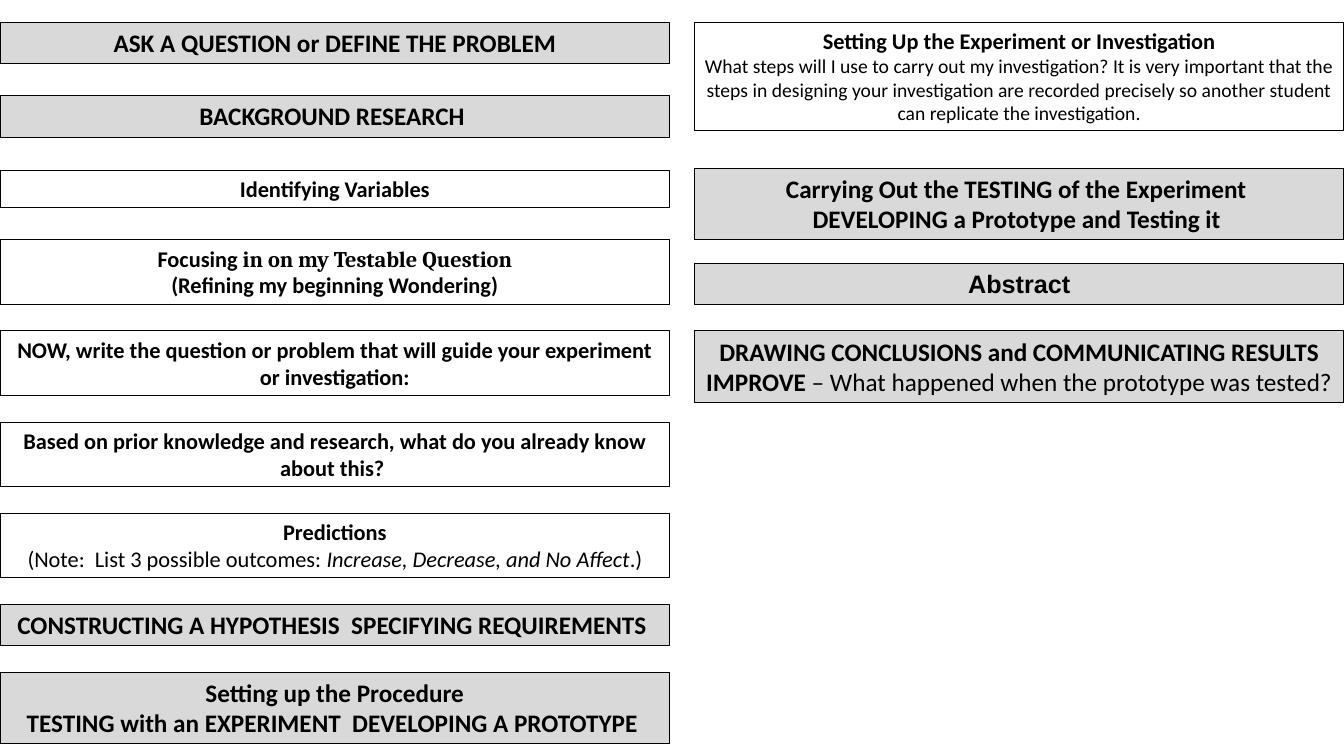
import pptx
import pptx.util
import pptx.dml.color
import pptx.enum.shapes
import pptx.enum.text

Pt = pptx.util.Pt
RGB = pptx.dml.color.RGBColor.from_string

COLORS = {"ink": "000000", "stage": "D9D9D9"}
PLAIN = {"bold": False}
ITALIC = {"bold": False, "italic": True}
SMALL = {"bold": False, "size": Pt(14)}
SPACE = (" ", {"size": Pt(16)})

# Content: (kind, top, height, paragraphs); a paragraph is a list of (text, format)
QUESTION_STEPS = [
    ("stage", 16, 29.1, [[("ASK A QUESTION or DEFINE THE PROBLEM", {})]]),
    ("stage", 68.4, 29.5, [[("BACKGROUND RESEARCH ", {})]]),
    ("detail", 121.5, 26.7, [[("Identifying Variables", {})]]),
    ("detail", 171.2, 46.1, [
        [("Focusing", {}), (" in on my Testable Question", {"name": "Cambria"})],
        [("(Refining my beginning Wondering)", {})]]),
    ("detail", 236.4, 46.1, [
        [("NOW, write the question or problem that will guide your experiment "
          "or investigation:", {})]]),
    ("detail", 301.6, 46.1, [
        [("Based on prior knowledge and research, what do you already know "
          "about this? ", {})]]),
    ("detail", 366.8, 46.1, [
        [("Predictions", {})],
        [("(Note:  List 3 possible outcomes: ", PLAIN),
         ("Increase, Decrease, and No Affect", ITALIC), (".)", PLAIN)]]),
    ("stage", 432, 29.1, [
        [("CONSTRUCTING A HYPOTHESIS  SPECIFYING REQUIREMENTS ", {})]]),
    ("stage", 480.3, 51.1, [
        [("Setting up the Procedure", {})],
        [("TESTING with an EXPERIMENT  DEVELOPING A PROTOTYPE", {}), SPACE]]),
]
EXPERIMENT_STEPS = [
    ("detail", 16, 77.4, [
        [("Setting Up the Experiment or Investigation", {})],
        [("What steps will I use to carry out my investigation? It is very "
          "important that the steps in designing your investigation are recorded "
          "precisely so another student can replicate the investigation.", SMALL)]]),
    ("stage", 120.2, 51.1, [
        [("Carrying Out the TESTING of the Experiment ", {})],
        [("DEVELOPING a Prototype and Testing it", {}), SPACE]]),
    ("stage", 188.4, 29.1, [[("Abstract", {"name": "Arial"})]]),
    ("stage", 236.4, 51.1, [
        [("DRAWING CONCLUSIONS and COMMUNICATING RESULTS", {})],
        [("IMPROVE", {}),
         (" – What happened when the prototype was tested?", PLAIN)]]),
]
# Columns: (left, width, steps)
COLUMNS = [(0, 478.4, QUESTION_STEPS), (496, 464, EXPERIMENT_STEPS)]
SIZES = {"stage": 18, "detail": 16}


def add_step(s, left, width, kind, top, height, paragraphs):
    sp = s.shapes.add_shape(pptx.enum.shapes.MSO_SHAPE.RECTANGLE,
                            Pt(left), Pt(top), Pt(width), Pt(height))
    sp.shadow.inherit = False
    sp.line.color.rgb = RGB(COLORS["ink"])
    sp.line.width = Pt(0.75)
    if kind == "stage":
        sp.fill.solid()
        sp.fill.fore_color.rgb = RGB(COLORS["stage"])
    else:
        sp.fill.background()

    tf = sp.text_frame
    frame = {"word_wrap": True,
             "vertical_anchor": pptx.enum.text.MSO_ANCHOR.TOP,
             "auto_size": pptx.enum.text.MSO_AUTO_SIZE.SHAPE_TO_FIT_TEXT}
    for key, value in frame.items():
        setattr(tf, key, value)

    base = {"name": "Calibri", "size": Pt(SIZES[kind]), "bold": True}
    for i, runs in enumerate(paragraphs):
        p = tf.add_paragraph() if i else tf.paragraphs[0]
        p.alignment = pptx.enum.text.PP_ALIGN.CENTER
        for text, changes in runs:
            r = p.add_run()
            r.text = text
            r.font.color.rgb = RGB(COLORS["ink"])
            for key, value in {**base, **changes}.items():
                setattr(r.font, key, value)


def main():
    prs = pptx.Presentation()
    prs.slide_width, prs.slide_height = Pt(960), Pt(540)
    s = prs.slides.add_slide(prs.slide_layouts[6])
    # Two columns of step boxes
    for left, width, steps in COLUMNS:
        for step in steps:
            add_step(s, left, width, *step)
    prs.save("out.pptx")


if __name__ == "__main__":
    main()
